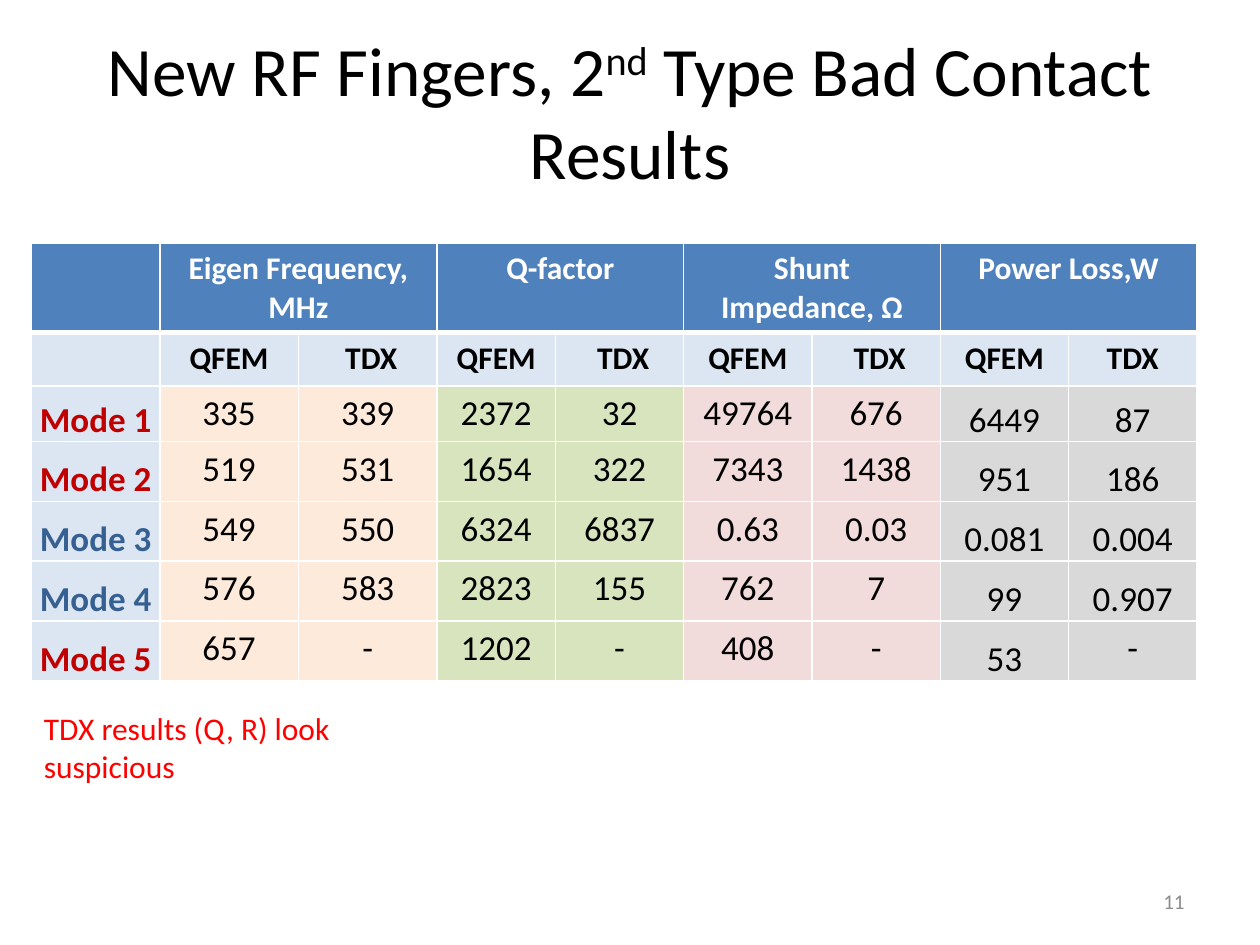
from lxml.etree import SubElement
from pptx import Presentation
from pptx.dml.color import RGBColor
from pptx.enum.text import MSO_ANCHOR as Anchor, MSO_AUTO_SIZE as AutoSize, PP_ALIGN as Align
from pptx.oxml.ns import qn
from pptx.util import Pt

COLORS = {
    "header": "4F81BD", "label": "DCE6F2", "frequency": "FDEADA",
    "quality": "D7E4BD", "impedance": "F2DCDB", "power": "D9D9D9",
    "white": "FFFFFF", "black": "000000", "grey": "8C8C8C",
    "bad": "C00000", "good": "376092", "warning": "FF0000",
}
SOLVERS = ["QFEM", "TDX"]
QUANTITIES = [
    ("Eigen Frequency, MHz", "frequency"), ("Q-factor", "quality"),
    ("Shunt Impedance, Ω", "impedance"), ("Power Loss,W", "power"),
]
MODES = [
    ("bad", ["335", "339", "2372", "32", "49764", "676", "6449", "87"]),
    ("bad", ["519", "531", "1654", "322", "7343", "1438", "951", "186"]),
    ("good", ["549", "550", "6324", "6837", "0.63", "0.03", "0.081", "0.004"]),
    ("good", ["576", "583", "2823", "155", "762", "7", "99", "0.907"]),
    ("bad", ["657", "-", "1202", "-", "408", "-", "53", "-"]),
]
COLUMN_WIDTHS = [73.32, 79.2, 79.2, 67.7] + [73.32] * 5
ROW_HEIGHTS = [50, 30.4, 31.2] + [34.2] * 4


def rgb(name):
    return RGBColor.from_string(COLORS[name])


def write(paragraph, text, size=18, color="black", bold=False, align=Align.CENTER, raised=False):
    paragraph.alignment = align
    run = paragraph.add_run()
    run.text = text
    font = run.font
    font.name, font.size, font.bold = "Calibri", Pt(size), bold
    font.color.rgb = rgb(color)
    if raised:
        run.font._element.set("baseline", "30000")


def place(shape, box):
    shape.left, shape.top, shape.width, shape.height = map(Pt, box)


def set_borders(cell, top=1, bottom=1):
    properties = cell._tc.get_or_add_tcPr()
    for side, width in (("L", 1), ("R", 1), ("T", top), ("B", bottom)):
        line = SubElement(properties, qn(f"a:ln{side}"), w=str(Pt(width)))
        fill = SubElement(line, qn("a:solidFill"))
        SubElement(fill, qn("a:srgbClr"), val=COLORS["white"])


def fill_cell(cell, text, fill, sunk=False, top=1, bottom=1, **style):
    set_borders(cell, top, bottom)
    cell.fill.solid()
    cell.fill.fore_color.rgb = rgb(fill)
    if sunk:
        cell.vertical_anchor = Anchor.BOTTOM
        cell.margin_left = cell.margin_right = cell.margin_top = Pt(0.72)
        cell.margin_bottom = 0
    if text:
        write(cell.text_frame.paragraphs[0], text, **style)


def add_title(slide, box):
    title = slide.shapes.title
    place(title, box)
    frame = title.text_frame
    frame.auto_size = AutoSize.NONE
    frame.vertical_anchor = Anchor.MIDDLE
    heading = frame.paragraphs[0]
    write(heading, "New RF Fingers, 2", size=39.6)
    write(heading, "nd", size=39.6, raised=True)
    write(heading, " Type Bad Contact", size=39.6)
    heading.add_line_break()
    write(heading, "Results", size=39.6)


def add_results(slide, box):
    results = slide.shapes.add_table(
        len(ROW_HEIGHTS), len(COLUMN_WIDTHS), *map(Pt, box)).table
    for column, width in zip(results.columns, COLUMN_WIDTHS):
        column.width = Pt(width)
    for row, height in zip(results.rows, ROW_HEIGHTS):
        row.height = Pt(height)

    fill_cell(results.cell(0, 0), "", "header", bottom=3)
    fill_cell(results.cell(1, 0), "", "label", top=3)
    last = len(COLUMN_WIDTHS) - 1
    for group, (quantity, _) in enumerate(QUANTITIES):
        first = 1 + 2 * group
        results.cell(0, first).merge(results.cell(0, first + 1))
        fill_cell(results.cell(0, first), quantity, "header", bottom=3, color="white", bold=True)
        fill_cell(results.cell(0, first + 1), "", "header", bottom=3)
        for col, solver in enumerate(SOLVERS, first):
            indent = " " if solver == SOLVERS[1] and col < last else ""
            fill_cell(results.cell(1, col), indent + solver, "label", top=3, bold=True)

    for number, (quality, values) in enumerate(MODES, 1):
        row = number + 1
        fill_cell(results.cell(row, 0), f"Mode {number}", "label",
                  sunk=True, size=20, color=quality, bold=True)
        for index, value in enumerate(values):
            fill = QUANTITIES[index // 2][1]
            fill_cell(results.cell(row, index + 1), value, fill,
                      sunk=fill == "power" and value != "-", size=20)


def add_note(slide, box, text, wrap=True, anchor=Anchor.TOP, **style):
    frame = slide.shapes.add_textbox(*map(Pt, box)).text_frame
    frame.word_wrap = wrap
    frame.vertical_anchor = anchor
    write(frame.paragraphs[0], text, **style)


def main():
    deck = Presentation()
    deck.slide_width, deck.slide_height = Pt(720), Pt(540)
    slide = deck.slides.add_slide(deck.slide_layouts[5])
    add_results(slide, (18, 139, sum(COLUMN_WIDTHS), sum(ROW_HEIGHTS)))
    add_note(slide, (516, 500.4, 168, 28.8), "11", anchor=Anchor.MIDDLE,
             size=12, color="grey", align=Align.RIGHT)
    add_note(slide, (18, 401.8, 256.3, 28.8), f"{SOLVERS[1]} results (Q, R) look suspicious",
             wrap=False, color="warning", align=Align.LEFT)
    add_title(slide, (36, 18, 648, 90))
    deck.save("out.pptx")


if __name__ == "__main__":
    main()
